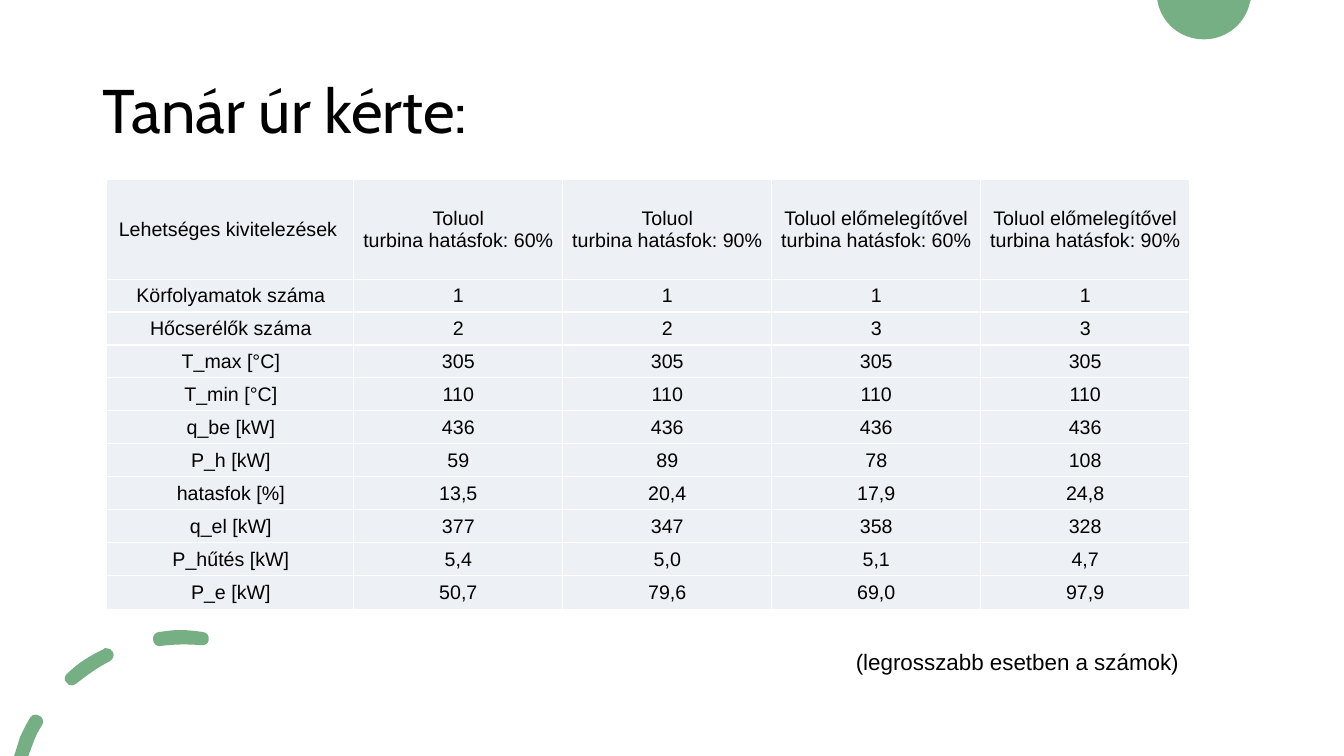
from lxml import etree
from pptx import Presentation
from pptx.dml.color import RGBColor
from pptx.enum.text import MSO_ANCHOR, PP_ALIGN
from pptx.oxml.ns import qn
from pptx.util import Inches, Pt

LEFT = PP_ALIGN.LEFT
CENTER = PP_ALIGN.CENTER
TOP = MSO_ANCHOR.TOP
MIDDLE = MSO_ANCHOR.MIDDLE

GREEN = "77AF84"
BLACK = "000000"
WHITE = "FFFFFF"
CELL_GREY = "EDF0F4"
BLANK_LAYOUT = 6

TABLE_TOP, TABLE_HEIGHT = 1.78, 4.27
HEADER_HEIGHT, LAST_HEIGHT = 0.99, 0.34

LABELS = [
    ["Lehetséges kivitelezések "], ["Körfolyamatok száma"], ["Hőcserélők száma"],
    ["T_max [°C]"], ["T_min [°C]"], ["q_be [kW]"], ["P_h [kW]"],
    ["hatasfok [%]"], ["q_el [kW]"], ["P_hűtés [kW]"], ["P_e [kW]"],
]
RESULTS = [
    ["Toluol\nturbina hatásfok: 60%", "Toluol\vturbina hatásfok: 90%",
     "Toluol előmelegítővel\nturbina hatásfok: 60%",
     "Toluol előmelegítővel\nturbina hatásfok: 90%"],
    ["1", "1", "1", "1"],
    ["2", "2", "3", "3"],
    ["305"] * 4,
    ["110"] * 4,
    ["436"] * 4,
    ["59", "89", "78", "108"],
    ["13,5", "20,4", "17,9", "24,8"],
    ["377", "347", "358", "328"],
    ["5,4", "5,0", "5,1", "4,7"],
    ["50,7", "79,6", "69,0", "97,9"],
]

CIRCLE = [[
    [(11.48, 0)], [(12.41, 0)], [(12.4, 0.01)],
    [(12.36, 0.23), (12.17, 0.39), (11.94, 0.39)],
    [(11.71, 0.39), (11.52, 0.23), (11.48, 0.01)],
]]
DASHES = [
    [
        [(0.36, 7.09)],
        [(0.34, 7.08), (0.31, 7.1), (0.3, 7.12)],
        [(0.26, 7.18), (0.23, 7.25), (0.2, 7.31)],
        [(0.14, 7.5)], [(0.28, 7.5)], [(0.33, 7.37)],
        [(0.35, 7.31), (0.38, 7.25), (0.42, 7.19)],
        [(0.44, 7.16), (0.42, 7.11), (0.39, 7.1)],
        [(0.38, 7.09), (0.37, 7.09), (0.36, 7.09)],
    ],
    [
        [(1.05, 6.43)],
        [(1.04, 6.43), (1.03, 6.43), (1.03, 6.44)],
        [(0.9, 6.5), (0.77, 6.58), (0.67, 6.68)],
        [(0.64, 6.7), (0.63, 6.75), (0.66, 6.77)],
        [(0.67, 6.79), (0.69, 6.8), (0.71, 6.8)],
        [(0.73, 6.8), (0.74, 6.79), (0.76, 6.78)],
        [(0.86, 6.7), (0.97, 6.62), (1.09, 6.56)],
        [(1.12, 6.54), (1.14, 6.5), (1.12, 6.47)],
        [(1.11, 6.44), (1.08, 6.43), (1.05, 6.43)],
    ],
    [
        [(1.79, 6.25)],
        [(1.72, 6.25), (1.65, 6.26), (1.58, 6.27)],
        [(1.54, 6.27), (1.51, 6.31), (1.52, 6.35)],
        [(1.52, 6.38), (1.55, 6.41), (1.58, 6.41)],
        [(1.73, 6.39), (1.86, 6.39), (1.99, 6.4)],
        [(2.03, 6.41), (2.07, 6.38), (2.07, 6.35)],
        [(2.08, 6.31), (2.05, 6.27), (2.01, 6.27)],
        [(1.94, 6.26), (1.86, 6.25), (1.79, 6.25)],
    ],
]


def rgb(color):
    """Turn a hex string into a colour."""
    return RGBColor.from_string(color)


def write_text(text_frame, text, size=14, font="Arial", color=BLACK,
               align=LEFT, anchor=TOP, line_spacing=None):
    """Fill a text frame, one paragraph for each line of text."""
    text_frame.text = text
    text_frame.word_wrap = True
    text_frame.vertical_anchor = anchor
    for paragraph in text_frame.paragraphs:
        paragraph.alignment = align
        paragraph.line_spacing = line_spacing
        for run in paragraph.runs:
            run.font.size = Pt(size)
            run.font.name = font
            run.font.color.rgb = rgb(color)
        for line_break in paragraph._p.findall(qn("a:br")):
            etree.SubElement(line_break, qn("a:rPr"), sz=str(size * 100))


def add_text(slide, left, top, width, height, text, **text_format):
    """Add a text box."""
    box = slide.shapes.add_textbox(Inches(left), Inches(top), Inches(width), Inches(height))
    write_text(box.text_frame, text, **text_format)


def curve_lines(shape, segments):
    """Turn the straight lines of a freeform into the cubic curves given."""
    lines = list(shape._element.iter(qn("a:lnTo")))
    for line, segment in zip(lines, segments):
        if len(segment) == 1:
            continue
        curve = etree.Element(qn("a:cubicBezTo"))
        for x, y in segment:
            etree.SubElement(curve, qn("a:pt"), x=str(Inches(x) - shape.left),
                             y=str(Inches(y) - shape.top))
        line.getparent().replace(line, curve)


def add_outline(slide, contours, color):
    """Add one filled freeform made of closed contours."""
    ends = [[(Inches(x), Inches(y)) for *_, (x, y) in contour] for contour in contours]
    builder = slide.shapes.build_freeform(*ends[0][0])
    for index, points in enumerate(ends):
        if index:
            builder.move_to(*points[0])
        builder.add_line_segments(points[1:], close=True)
    shape = builder.convert_to_shape()
    curve_lines(shape, [segment for contour in contours for segment in contour[1:]])
    shape.shadow.inherit = False
    shape.fill.solid()
    shape.fill.fore_color.rgb = rgb(color)
    shape.line.fill.background()


def add_cell_borders(cell, color, width):
    """Draw a line on all four sides of a cell."""
    properties = cell._tc.get_or_add_tcPr()
    for side in ("a:lnL", "a:lnR", "a:lnT", "a:lnB"):
        line = etree.SubElement(properties, qn(side), w=str(Pt(width)))
        fill = etree.SubElement(line, qn("a:solidFill"))
        etree.SubElement(fill, qn("a:srgbClr"), val=color)


def add_data_table(slide, left, width, rows):
    """Add a table with equal columns and a tall header row."""
    row_count, column_count = len(rows), len(rows[0])
    table = slide.shapes.add_table(row_count, column_count, Inches(left), Inches(TABLE_TOP),
                                   Inches(width), Inches(TABLE_HEIGHT)).table
    body_height = (TABLE_HEIGHT - HEADER_HEIGHT - LAST_HEIGHT) / (row_count - 2)
    heights = [HEADER_HEIGHT, *[body_height] * (row_count - 2), LAST_HEIGHT]
    for column in table.columns:
        column.width = Inches(width / column_count)
    for row, height, values in zip(table.rows, heights, rows):
        row.height = Inches(height)
        for cell, value in zip(row.cells, values):
            write_text(cell.text_frame, value, align=CENTER)
            cell.vertical_anchor = MIDDLE
            cell.margin_left = cell.margin_right = cell.margin_top = Inches(0.01)
            cell.margin_bottom = 0
            add_cell_borders(cell, WHITE, 1)
            cell.fill.solid()
            cell.fill.fore_color.rgb = rgb(CELL_GREY)


def main():
    """Build the slide and save it."""
    presentation = Presentation()
    presentation.slide_width = Inches(13.33)
    presentation.slide_height = Inches(7.5)
    slide = presentation.slides.add_slide(presentation.slide_layouts[BLANK_LAYOUT])
    add_outline(slide, CIRCLE, GREEN)
    add_outline(slide, DASHES, GREEN)
    add_text(slide, 0.92, 0.4, 11.5, 1.45, "Tanár úr kérte:",
             size=44, font="Cabin", anchor=MIDDLE, line_spacing=0.9)
    add_data_table(slide, 1.06, 2.46, LABELS)
    add_data_table(slide, 3.51, 8.29, RESULTS)
    add_text(slide, 8.39, 6.38, 4.7, 0.37, "(legrosszabb esetben a számok)", size=16)
    presentation.save("out.pptx")


if __name__ == "__main__":
    main()
